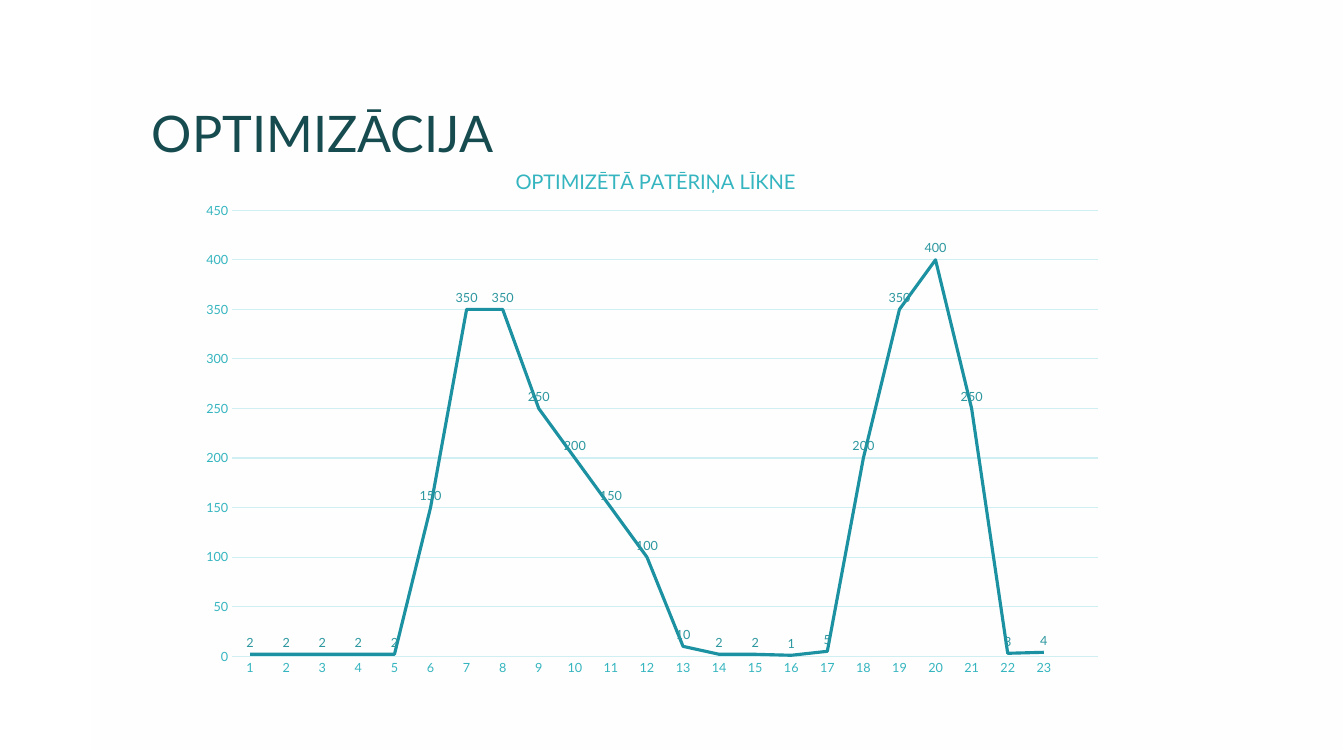
from lxml.etree import SubElement
from pptx import Presentation
from pptx.chart.data import CategoryChartData
from pptx.dml.color import RGBColor
from pptx.enum.chart import XL_CHART_TYPE, XL_LABEL_POSITION, XL_TICK_MARK
from pptx.enum.shapes import MSO_SHAPE
from pptx.enum.text import MSO_ANCHOR
from pptx.oxml import parse_xml
from pptx.oxml.ns import nsdecls, qn
from pptx.util import Cm, Pt

HEADING = "OPTIMIZĀCIJA"
CHART_TITLE = "OPTIMIZĒTĀ PATĒRIŅA LĪKNE"
SERIES = "Series 1"
LOADS = [2, 2, 2, 2, 2, 150, 350, 350, 250, 200, 150, 100,
         10, 2, 2, 1, 5, 200, 350, 400, 250, 3, 4, None]
HOURS = [str(i) if load is not None else "" for i, load in enumerate(LOADS, 1)]

FONT = "Lato"
DARK, TEAL, AXIS, LABEL, GRID = "164B4F", "1B91A1", "35B5BF", "2C979F", "CFEFF2"
PANEL_BOX = (2.31, 0, 31.52, 19.05)
HEADING_BOX = (3.58, 1.07, 26.67, 3.18)
CHART_BOX = (4.72, 3.53, 23.39, 13.79)
PLOT_BOX = (5.85, 5.3, 21.82, 11.24)
TITLE_AT = (12.9, 4.11)


def rgb(code):
    return RGBColor.from_string(code)


def style(font, size, color):
    font.name, font.size, font.bold = FONT, Pt(size), False
    font.color.rgb = rgb(color)


def write(tf, text, size=12, color=DARK, spacing=None):
    p = tf.paragraphs[0]
    p.line_spacing = spacing
    r = p.add_run()
    r.text = text
    style(r.font, size, color)


def stroke(line, color, width):
    line.color.rgb = rgb(color)
    line.width = Pt(width)


def manual_layout(left, top, width=None, height=None, inner=False):
    """Return a chart layout element for a place given in slide centimetres."""
    x0, y0, w0, h0 = CHART_BOX
    parts = [("layoutTarget", "inner")] if inner else []
    parts += [("xMode", "edge"), ("yMode", "edge"),
              ("x", (left - x0) / w0), ("y", (top - y0) / h0)]
    if width:
        parts += [("w", width / w0), ("h", height / h0)]
    body = "".join(f'<c:{k} val="{v}"/>' for k, v in parts)
    return parse_xml(f'<c:layout {nsdecls("c")}><c:manualLayout>{body}'
                     '</c:manualLayout></c:layout>')


def add_panel(s):
    sp = s.shapes.add_shape(MSO_SHAPE.RECTANGLE, *map(Cm, PANEL_BOX))
    sp.shadow.inherit = False
    sp.line.fill.background()
    sp.fill.gradient()
    sp.fill.gradient_angle = 270
    for stop, alpha in zip(sp.fill.gradient_stops, (60, 0)):
        stop.color.rgb = rgb("FFFFFF")
    for code, alpha in zip(sp.fill._xPr.iter(qn("a:srgbClr")), (60, 0)):
        SubElement(code, qn("a:alpha")).set("val", str(alpha * 1000))


def add_heading(s):
    tf = s.shapes.add_textbox(*map(Cm, HEADING_BOX)).text_frame
    tf.word_wrap = True
    tf.vertical_anchor = MSO_ANCHOR.BOTTOM
    write(tf, HEADING, size=36, spacing=0.9)


def add_load_chart(s):
    data = CategoryChartData()
    data.categories = HOURS
    data.add_series(SERIES, LOADS)
    chart = s.shapes.add_chart(XL_CHART_TYPE.LINE, *map(Cm, CHART_BOX), data).chart
    style(chart.font, 10, DARK)
    chart.has_legend = False

    chart.has_title = True
    title = chart.chart_title
    write(title.text_frame, CHART_TITLE, size=14.4, color=AXIS)
    title.include_in_layout = False
    place(title._element, manual_layout(*TITLE_AT), qn("c:tx"))
    place(chart._chartSpace.chart.plotArea, manual_layout(*PLOT_BOX, inner=True))

    for axis in (chart.category_axis, chart.value_axis):
        axis.major_tick_mark = axis.minor_tick_mark = XL_TICK_MARK.NONE
        style(axis.tick_labels.font, 9, AXIS)
    stroke(chart.category_axis.format.line, GRID, 0.75)
    axis = chart.value_axis
    axis.minimum_scale, axis.maximum_scale, axis.major_unit = 0, 450, 50
    axis.format.line.fill.background()
    stroke(axis.major_gridlines.format.line, GRID, 0.75)

    series = chart.plots[0].series[0]
    series.smooth = False
    stroke(series.format.line, TEAL, 2.25)
    labels = series.data_labels
    labels.show_value = True
    labels.position = XL_LABEL_POSITION.ABOVE
    style(labels.font, 9, LABEL)


def place(parent, layout, after=None):
    for old in parent.findall(qn("c:layout")):
        parent.remove(old)
    parent.insert(parent.index(parent.find(after)) + 1 if after else 0, layout)


def main():
    prs = Presentation()
    prs.slide_width, prs.slide_height = Cm(33.87), Cm(19.05)
    s = prs.slides.add_slide(prs.slide_layouts[6])
    add_panel(s)
    add_heading(s)
    add_load_chart(s)
    prs.save("out.pptx")


if __name__ == "__main__":
    main()
